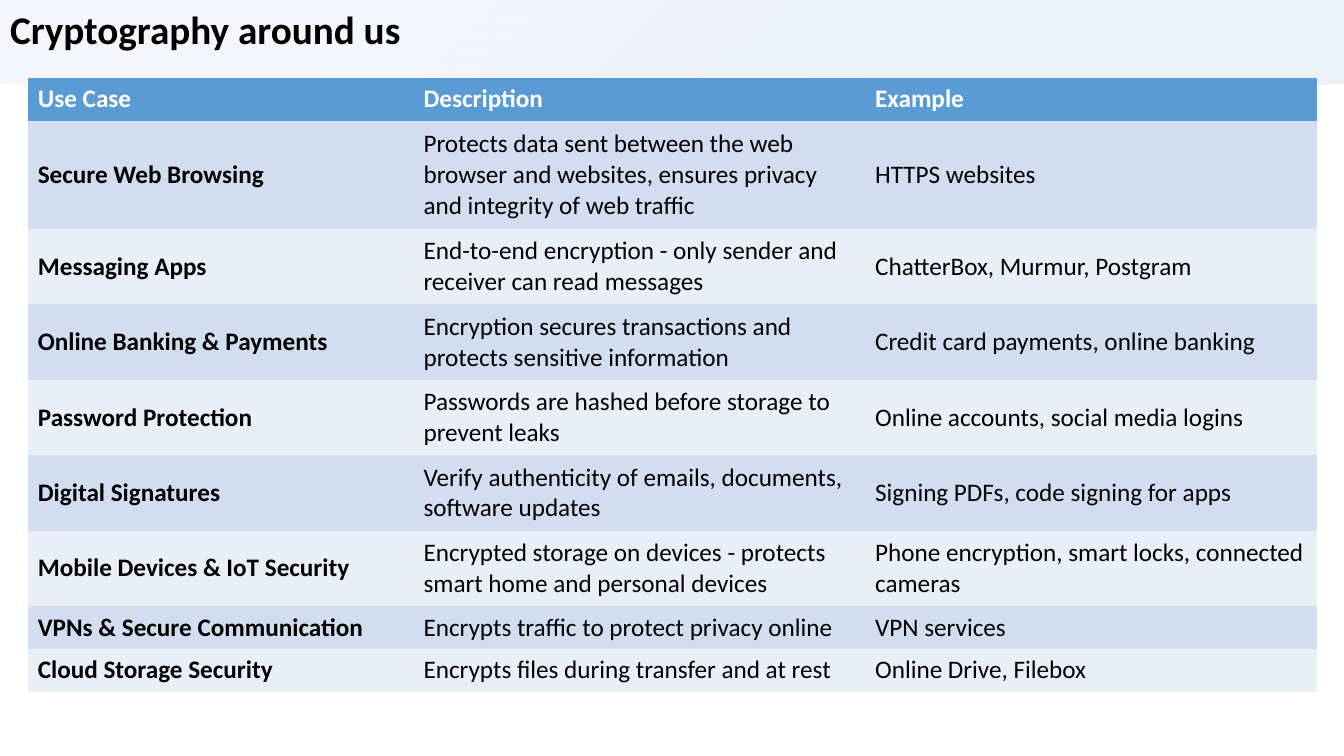
from lxml import etree
from pptx import Presentation
from pptx.dml.color import RGBColor
from pptx.enum.text import MSO_ANCHOR, MSO_AUTO_SIZE, PP_ALIGN
from pptx.oxml import parse_xml
from pptx.oxml.ns import qn
from pptx.util import Cm, Pt

MIDDLE, TOP = MSO_ANCHOR.MIDDLE, MSO_ANCHOR.TOP
LEFT = PP_ALIGN.LEFT
FIT_SHAPE = MSO_AUTO_SIZE.SHAPE_TO_FIT_TEXT
TITLE_ONLY = 5

HEADING = "Cryptography around us"
USE_CASES = [
    ("Use Case", "Description", "Example"),
    ("Secure Web Browsing",
     "Protects data sent between the web browser and websites, ensures privacy and integrity of web traffic",
     "HTTPS websites"),
    ("Messaging Apps",
     "End-to-end encryption - only sender and receiver can read messages",
     "ChatterBox, Murmur, Postgram"),
    ("Online Banking & Payments",
     "Encryption secures transactions and protects sensitive information",
     "Credit card payments, online banking"),
    ("Password Protection",
     "Passwords are hashed before storage to prevent leaks",
     "Online accounts, social media logins"),
    ("Digital Signatures",
     "Verify authenticity of emails, documents, software updates",
     "Signing PDFs, code signing for apps"),
    ("Mobile Devices & IoT Security",
     "Encrypted storage on devices - protects smart home and personal devices",
     "Phone encryption, smart locks, connected cameras"),
    ("VPNs & Secure Communication",
     "Encrypts traffic to protect privacy online",
     "VPN services"),
    ("Cloud Storage Security",
     "Encrypts files during transfer and at rest",
     "Online Drive, Filebox"),
]
COLUMN_WIDTHS = [9.72, 11.38, 11.38]
LINES_PER_ROW = [1, 3, 2, 2, 2, 2, 2, 1, 1]
HEIGHT_BY_LINES = {1: 1.08, 2: 1.9, 3: 2.72}

FONT = "Calibri"
BLACK, WHITE = "000000", "FFFFFF"
HEADER_BLUE, BANDS = "5B9BD5", ("D2DEEF", "EAEFF7")
PLAIN_STYLE = "{2D5ABB26-0587-4C30-8999-92F81FD0307C}"
BANNER_TINT = "4472C4"
BANNER_STOPS = [(26, 10), (76, 5)]
DRAWING = "http://schemas.openxmlformats.org/drawingml/2006/main"


def color(hex_value):
    return RGBColor.from_string(hex_value)


def format_text(frame, size, bold, hex_value):
    paragraph = frame.paragraphs[0]
    paragraph.alignment = LEFT
    font = paragraph.font
    font.name, font.size, font.bold = FONT, Pt(size), bold
    font.color.rgb = color(hex_value)


def fill_with_glow(banner):
    stops = "".join(
        f'<a:gs pos="{position * 1000}"><a:srgbClr val="{BANNER_TINT}">'
        f'<a:alpha val="{alpha * 1000}"/></a:srgbClr></a:gs>'
        for position, alpha in BANNER_STOPS)
    banner._element.spPr.append(parse_xml(
        f'<a:gradFill xmlns:a="{DRAWING}" rotWithShape="1"><a:gsLst>{stops}</a:gsLst>'
        '<a:path path="circle"><a:fillToRect l="100000" t="100000"/></a:path></a:gradFill>'))


def add_heading(slide, width):
    banner = slide.shapes.title
    banner.left, banner.top, banner.width, banner.height = 0, 0, width, Cm(1.45)
    fill_with_glow(banner)
    frame = banner.text_frame
    frame.text = HEADING
    frame.word_wrap = True
    frame.auto_size = FIT_SHAPE
    frame.vertical_anchor = TOP
    format_text(frame, 28, True, BLACK)


def add_use_cases(slide):
    heights = [HEIGHT_BY_LINES[lines] for lines in LINES_PER_ROW]
    frame = slide.shapes.add_table(
        len(USE_CASES), len(COLUMN_WIDTHS), Cm(0.7), Cm(1.97),
        Cm(sum(COLUMN_WIDTHS)), Cm(sum(heights)))
    table = frame.table
    table.horz_banding = False
    table._tbl.tblPr.find(qn("a:tableStyleId")).text = PLAIN_STYLE
    for column, width in zip(table.columns, COLUMN_WIDTHS):
        column.width = Cm(width)
    for r, (row, height) in enumerate(zip(table.rows, heights)):
        row.height = Cm(height)
        is_header = r == 0
        background = HEADER_BLUE if is_header else BANDS[(r - 1) % 2]
        for c, cell in enumerate(row.cells):
            cell.text = USE_CASES[r][c]
            cell.vertical_anchor = TOP if is_header else MIDDLE
            cell.fill.solid()
            cell.fill.fore_color.rgb = color(background)
            format_text(cell.text_frame, 18, is_header or c == 0,
                        WHITE if is_header else BLACK)


def main():
    deck = Presentation()
    deck.slide_width, deck.slide_height = Cm(33.87), Cm(19.05)
    slide = deck.slides.add_slide(deck.slide_layouts[TITLE_ONLY])
    add_heading(slide, deck.slide_width)
    add_use_cases(slide)
    deck.save("out.pptx")


if __name__ == "__main__":
    main()
